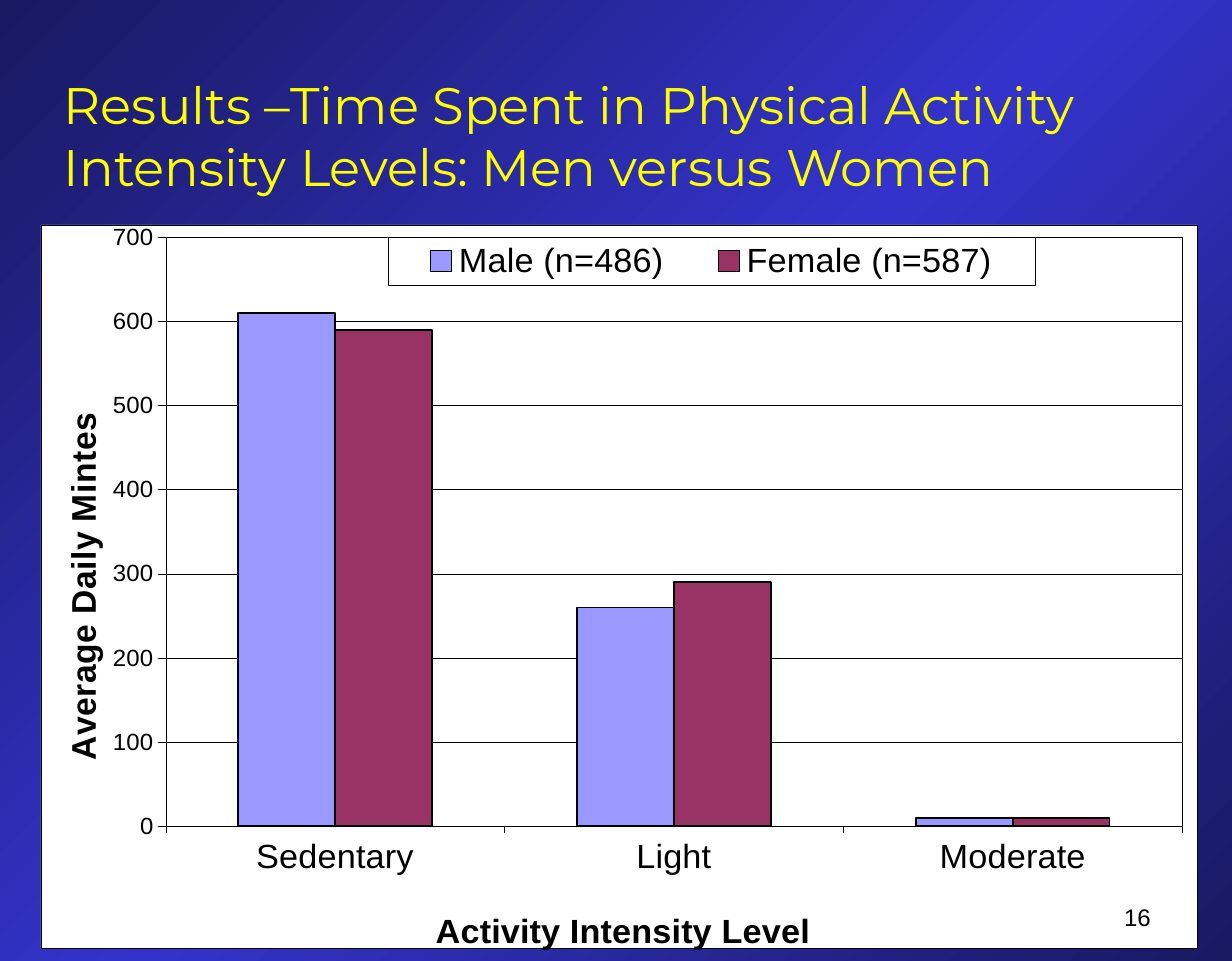
from dataclasses import dataclass
from typing import Optional

from lxml.etree import _Element as Element
from pptx import Presentation
from pptx.chart.data import CategoryChartData
from pptx.dml.color import RGBColor
from pptx.enum.chart import XL_CHART_TYPE as ChartType
from pptx.enum.chart import XL_LEGEND_POSITION as LegendPosition
from pptx.enum.chart import XL_TICK_MARK as TickMark
from pptx.enum.text import MSO_ANCHOR as Anchor
from pptx.enum.text import PP_ALIGN as Align
from pptx.oxml import parse_xml
from pptx.oxml.ns import nsdecls, qn
from pptx.util import Inches, Pt

WIDTH, HEIGHT = 10, 7.8


@dataclass(frozen=True)
class Theme:
    heading_font: str = "Montserrat"
    body_font: str = "Arial"
    heading: str = "FFFF00"
    number: str = "020202"
    ink: str = "000000"
    paper: str = "FFFFFF"
    dark: str = "191961"
    bright: str = "3333CC"
    heading_size: int = 30
    label_size: int = 20
    small_size: int = 14
    hairline: float = 0.25
    outline: float = 1


@dataclass(frozen=True)
class Box:
    left: float
    top: float
    width: Optional[float] = None
    height: Optional[float] = None

    def lengths(self) -> tuple:
        return tuple(Inches(share * side) for share, side in zip(
            (self.left, self.top, self.width, self.height), (WIDTH, HEIGHT) * 2))


@dataclass(frozen=True)
class Label:
    text: str
    box: Box
    font: str
    size: int
    color: str
    align: Align = Align.LEFT


@dataclass(frozen=True)
class Group:
    name: str
    minutes: tuple
    color: str


THEME = Theme()
LABELS = (
    Label("Results –Time Spent in Physical Activity Intensity Levels: Men versus Women",
          Box(0.042, 0.051, 0.958, 0.16), THEME.heading_font, THEME.heading_size, THEME.heading),
    Label("16", Box(0.736, 0.908, 0.208, 0.067), THEME.body_font, THEME.small_size,
          THEME.number, Align.RIGHT),
)
LEVELS = ("Sedentary", "Light", "Moderate")
GROUPS = (
    Group("Male (n=486)", (610, 260, 10), "9999FF"),
    Group("Female (n=587)", (590, 290, 10), "993366"),
)
CHART_BOX = Box(0.033, 0.233, 0.939, 0.767)
PLOT_BOX = Box(0.108, 0.017, 0.879, 0.815)
LEGEND_BOX = Box(0.3, 0.017, 0.56, 0.066)


def style_font(font, name: str, size: int, color: str, bold: bool = False) -> None:
    """Set the face, size, colour and weight of a font."""
    font.name, font.size, font.bold = name, Pt(size), bold
    font.color.rgb = RGBColor.from_string(color)


def style_line(line, width: float) -> None:
    """Give a line the ink colour and a width."""
    line.color.rgb = RGBColor.from_string(THEME.ink)
    line.width = Pt(width)


def paint_background(slide) -> None:
    """Fill the slide with a diagonal gradient that is bright in the middle."""
    fill = slide.background.fill
    fill.gradient()
    fill.gradient_angle = 315
    stops = slide.background._cSld.find(".//" + qn("a:gsLst"))
    for stop in list(stops):
        stops.remove(stop)
    for position, color in ((0, THEME.dark), (50, THEME.bright), (100, THEME.dark)):
        stops.append(parse_xml(
            f'<a:gs {nsdecls("a")} pos="{position * 1000}"><a:srgbClr val="{color}"/></a:gs>'))


def add_label(slide, label: Label) -> None:
    """Add one bottom-anchored text box."""
    text_frame = slide.shapes.add_textbox(*label.box.lengths()).text_frame
    text_frame.word_wrap = True
    text_frame.vertical_anchor = Anchor.BOTTOM
    text_frame.text = label.text
    paragraph = text_frame.paragraphs[0]
    paragraph.alignment = label.align
    style_font(paragraph.runs[0].font, label.font, label.size, label.color)


def panel() -> Element:
    """Return the properties of a white area with a thin border."""
    return parse_xml(
        f'<c:spPr {nsdecls("c", "a")}>'
        f'<a:solidFill><a:srgbClr val="{THEME.paper}"/></a:solidFill>'
        f'<a:ln w="{Pt(THEME.hairline)}"><a:solidFill><a:srgbClr val="{THEME.ink}"/>'
        '</a:solidFill></a:ln></c:spPr>')


def place(parent: Element, box: Box, after: Optional[str] = None) -> None:
    """Fix a chart part at shares of the chart area."""
    for old in parent.findall(qn("c:layout")):
        parent.remove(old)
    target = '<c:layoutTarget val="inner"/>' if after is None else ""
    shares = (("x", box.left), ("y", box.top), ("w", box.width), ("h", box.height))
    layout = parse_xml(
        f'<c:layout {nsdecls("c")}><c:manualLayout>{target}'
        '<c:xMode val="edge"/><c:yMode val="edge"/>'
        + "".join(f'<c:{key} val="{share}"/>' for key, share in shares if share is not None)
        + '</c:manualLayout></c:layout>')
    if after is None:
        parent.insert(0, layout)
    else:
        parent.find(qn(after)).addnext(layout)


def style_axis(axis, title: str, size: int, corner: Box) -> None:
    """Format an axis with its labels, ticks and title."""
    axis.major_tick_mark = TickMark.OUTSIDE
    style_line(axis.format.line, THEME.hairline)
    style_font(axis.tick_labels.font, THEME.body_font, size, THEME.ink)
    text_frame = axis.axis_title.text_frame
    text_frame.text = title
    style_font(text_frame.paragraphs[0].runs[0].font, THEME.body_font,
               THEME.label_size, THEME.ink, bold=True)
    place(axis.axis_title._element, corner, "c:tx")


def add_activity_chart(slide) -> None:
    """Add the clustered columns of daily minutes by intensity level."""
    data = CategoryChartData()
    data.categories = LEVELS
    for group in GROUPS:
        data.add_series(group.name, group.minutes)
    chart = slide.shapes.add_chart(
        ChartType.COLUMN_CLUSTERED, *CHART_BOX.lengths(), data).chart
    chart.has_title = False
    style_font(chart.font, THEME.body_font, THEME.small_size, THEME.ink)

    plot = chart.plots[0]
    plot.gap_width, plot.overlap, plot.vary_by_categories = 150, 0, False
    for series, group in zip(plot.series, GROUPS):
        series.format.fill.solid()
        series.format.fill.fore_color.rgb = RGBColor.from_string(group.color)
        style_line(series.format.line, THEME.outline)

    style_axis(chart.category_axis, "Activity Intensity Level", THEME.label_size, Box(0.336, 0.938))
    values = chart.value_axis
    style_axis(values, "Average Daily Mintes", THEME.small_size, Box(0.012, 0.26))
    values.axis_title.text_frame._txBody.bodyPr.set("rot", "-5400000")
    values.minimum_scale, values.maximum_scale, values.major_unit = 0, 700, 100
    style_line(values.major_gridlines.format.line, THEME.hairline)

    chart.has_legend = True
    chart.legend.position = LegendPosition.TOP
    chart.legend.include_in_layout = False
    style_font(chart.legend.font, THEME.body_font, THEME.label_size, THEME.ink)
    legend = chart.legend._element
    place(legend, LEGEND_BOX, "c:legendPos")
    legend.find(qn("c:overlay")).addnext(panel())

    chart_area = chart._chartSpace.find(qn("c:chart"))
    chart_area.addnext(panel())
    plot_area = chart_area.find(qn("c:plotArea"))
    place(plot_area, PLOT_BOX)
    plot_area.append(panel())


def main() -> None:
    """Build and save the presentation."""
    presentation = Presentation()
    presentation.slide_width, presentation.slide_height = Inches(WIDTH), Inches(HEIGHT)
    slide = presentation.slides.add_slide(presentation.slide_layouts[6])
    paint_background(slide)
    heading, number = LABELS
    add_label(slide, heading)
    add_activity_chart(slide)
    add_label(slide, number)
    presentation.save("out.pptx")


if __name__ == "__main__":
    main()
